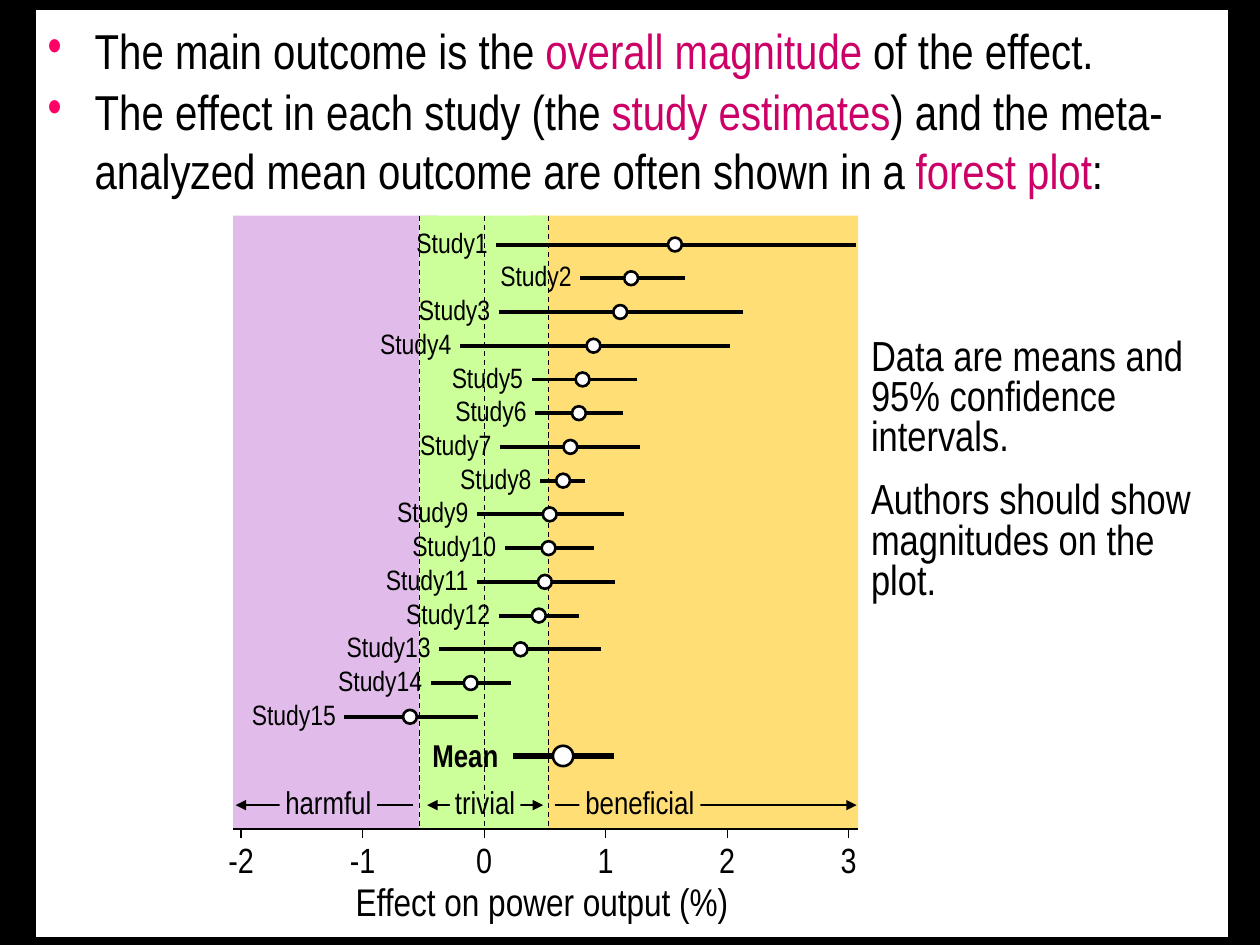
from dataclasses import dataclass

from lxml import etree
from pptx import Presentation
from pptx.dml.color import RGBColor
from pptx.enum.dml import MSO_LINE
from pptx.enum.shapes import MSO_CONNECTOR, MSO_SHAPE
from pptx.enum.text import MSO_ANCHOR, MSO_AUTO_SIZE, PP_ALIGN
from pptx.oxml.ns import qn
from pptx.util import Cm, Pt

RECTANGLE, OVAL = MSO_SHAPE.RECTANGLE, MSO_SHAPE.OVAL
STRAIGHT, DASH = MSO_CONNECTOR.STRAIGHT, MSO_LINE.DASH
LEFT, CENTER, RIGHT = PP_ALIGN.LEFT, PP_ALIGN.CENTER, PP_ALIGN.RIGHT
TOP, FIT_TEXT = MSO_ANCHOR.TOP, MSO_AUTO_SIZE.SHAPE_TO_FIT_TEXT


@dataclass(frozen=True)
class Theme:
    font: str = "Arial Narrow"
    black: str = "000000"
    white: str = "FFFFFF"
    accent: str = "CC0066"
    bullet: str = "FF0066"
    harmful: str = "E1BCEA"
    trivial: str = "CCFF99"
    beneficial: str = "FFDE75"
    body_size: int = 28
    note_size: int = 24
    title_size: int = 22
    tick_size: int = 20
    zone_size: int = 18
    study_size: int = 16


@dataclass(frozen=True)
class Estimate:
    """A mean effect and its confidence limits, in percent."""
    name: str
    low: float
    mean: float
    high: float


@dataclass(frozen=True)
class Zone:
    """A magnitude band; lengths in cm."""
    name: str
    color: str
    left: float
    width: float
    label_left: float
    label_width: float


THEME = Theme()

# Plot geometry in cm
PLOT_LEFT, PLOT_RIGHT, PLOT_TOP, AXIS_Y = 4.7, 17.3, 4.35, 16.71
ZERO_X, UNIT = 9.76, 2.45
FIRST_ROW, ROW_STEP, MEAN_ROW = 4.93, 0.68, 15.24
ZONE_ROW, THRESHOLD = 16.23, 0.53

BULLETS = [
    [("The main outcome is the ", False), ("overall magnitude", True), (" of the effect.", False)],
    [("The effect in each study (the ", False), ("study estimates", True),
     (") and the meta-analyzed mean outcome are often shown in a ", False),
     ("forest plot", True), (":", False)],
]
ZONES = [
    Zone("beneficial", THEME.beneficial, 10.69, 6.61, 11.68, 2.44),
    Zone("harmful", THEME.harmful, PLOT_LEFT, 4.14, 5.64, 1.96),
    Zone("trivial", THEME.trivial, 8.45, 2.6, 9.07, 1.42),
]
LIMITS = [
    (0.10, 1.57, 3.06), (0.79, 1.21, 1.65), (0.12, 1.12, 2.13), (-0.20, 0.90, 2.02),
    (0.39, 0.81, 1.26), (0.42, 0.78, 1.14), (0.13, 0.71, 1.28), (0.46, 0.65, 0.83),
    (-0.06, 0.54, 1.15), (0.17, 0.53, 0.90), (-0.06, 0.50, 1.08), (0.12, 0.45, 0.78),
    (-0.37, 0.30, 0.96), (-0.44, -0.11, 0.22), (-1.15, -0.61, -0.05),
]
STUDIES = [Estimate(f"Study{number}", *limits) for number, limits in enumerate(LIMITS, 1)]
OVERALL = Estimate("Mean", 0.24, 0.65, 1.07)
NOTES = [
    ("Data are means and 95% confidence intervals.", 6.83),
    ("Authors should show magnitudes on the plot.", 9.73),
]


def axis_x(effect: float) -> float:
    return ZERO_X + UNIT * effect


def add_box(shapes, kind, left: float, top: float, width: float, height: float,
            fill: str, line_width: float = 0):
    box = shapes.add_shape(kind, Cm(left), Cm(top), Cm(width), Cm(height))
    box.shadow.inherit = False
    box.fill.solid()
    box.fill.fore_color.rgb = RGBColor.from_string(fill)
    if line_width:
        box.line.color.rgb = RGBColor.from_string(THEME.black)
        box.line.width = Pt(line_width)
    else:
        box.line.fill.background()
    return box


def add_line(shapes, x1: float, y1: float, x2: float, y2: float, width: float = 0.75,
             dashed: bool = False, arrows: tuple[str, ...] = ()) -> None:
    line = shapes.add_connector(STRAIGHT, Cm(x1), Cm(y1), Cm(x2), Cm(y2))
    line.line.color.rgb = RGBColor.from_string(THEME.black)
    line.line.width = Pt(width)
    if dashed:
        line.line.dash_style = DASH
    for end in arrows:
        etree.SubElement(line.line._get_or_add_ln(), qn(f"a:{end}"), type="triangle")
    etree.SubElement(line._element.spPr, qn("a:effectLst"))


def style_run(run, size: int, color: str = THEME.black, bold: bool = False) -> None:
    run.font.name = THEME.font
    run.font.size = Pt(size)
    run.font.bold = bold
    run.font.color.rgb = RGBColor.from_string(color)


def add_text(shapes, text: str, left: float, top: float, width: float, height: float,
             size: int, align=CENTER, fill: str = "", bold: bool = False,
             wrap: bool = False, inset: tuple[float, float] = (0.1, 0)) -> None:
    if fill:
        box = add_box(shapes, RECTANGLE, left, top, width, height, fill)
    else:
        box = shapes.add_textbox(Cm(left), Cm(top), Cm(width), Cm(height))
    frame = box.text_frame
    frame.margin_left = frame.margin_right = Cm(inset[0])
    frame.margin_top = frame.margin_bottom = Cm(inset[1])
    frame.vertical_anchor = TOP
    frame.word_wrap = wrap
    frame.auto_size = FIT_TEXT
    frame.text = text
    para = frame.paragraphs[0]
    para.alignment = align
    para.line_spacing = 0.8
    style_run(para.runs[0], size, bold=bold)


def add_bullets(shapes) -> None:
    panel = add_box(shapes, RECTANGLE, 0.71, 0.18, 24.05, 18.72, THEME.white, 0.75)
    frame = panel.text_frame
    frame.word_wrap = True
    frame.vertical_anchor = TOP
    frame.margin_left = frame.margin_right = Cm(0.25)
    frame.margin_top, frame.margin_bottom = Cm(0.23), Cm(0.13)
    for index, spans in enumerate(BULLETS):
        para = frame.add_paragraph() if index else frame.paragraphs[0]
        para.alignment = LEFT
        para.space_before = Pt(1.4)
        properties = para._p.get_or_add_pPr()
        properties.set("marL", str(Cm(0.95)))
        properties.set("indent", str(-Cm(0.95)))
        color = etree.SubElement(properties, qn("a:buClr"))
        etree.SubElement(color, qn("a:srgbClr"), val=THEME.bullet)
        etree.SubElement(properties, qn("a:buFont"), typeface=THEME.font)
        etree.SubElement(properties, qn("a:buChar"), char="•")
        for text, highlighted in spans:
            span = para.add_run()
            span.text = text
            style_run(span, THEME.body_size, THEME.accent if highlighted else THEME.black)


def add_zones(shapes) -> None:
    for zone in ZONES:
        add_box(shapes, RECTANGLE, zone.left, PLOT_TOP, zone.width, AXIS_Y - PLOT_TOP, zone.color)
    for effect in (THRESHOLD, -THRESHOLD):
        add_line(shapes, axis_x(effect), PLOT_TOP, axis_x(effect), AXIS_Y, dashed=True)
    for start, end, arrows in ((11.18, 17.27, ("tailEnd",)), (8.33, 4.75, ("tailEnd",)),
                               (10.95, 8.61, ("headEnd", "tailEnd"))):
        add_line(shapes, start, ZONE_ROW, end, ZONE_ROW, arrows=arrows)
    for zone in ZONES:
        add_text(shapes, zone.name, zone.label_left, ZONE_ROW - 0.3, zone.label_width, 0.61,
                 THEME.zone_size, fill=zone.color)


def add_estimate(shapes, estimate: Estimate, y: float, overall: bool = False) -> None:
    low, mean, high = map(axis_x, (estimate.low, estimate.mean, estimate.high))
    marker = 0.41 if overall else 0.28
    label_width = 1.85 if overall else 1.96 if len(estimate.name) < 7 else 2.23
    label_right = low - 0.05 if overall else low + 0.08
    add_text(shapes, estimate.name, label_right - label_width, y - 0.39, label_width, 0.82,
             THEME.zone_size if overall else THEME.study_size, RIGHT,
             bold=overall, inset=(0.25, 0.13))
    add_line(shapes, high, y, low, y, 3.75 if overall else 2.25)
    add_box(shapes, OVAL, mean - marker / 2, y - marker / 2, marker, marker, THEME.white, 1.5)


def add_axis(shapes) -> None:
    add_line(shapes, PLOT_LEFT, AXIS_Y, PLOT_RIGHT, AXIS_Y)
    for effect in range(-2, 4):
        x, label = axis_x(effect), str(effect)
        width = 0.3 + 0.3 * len(label)
        add_line(shapes, x, AXIS_Y + 0.18, x, AXIS_Y)
        add_text(shapes, label, x - width / 2, 17.07, width, 0.69, THEME.tick_size)
    add_text(shapes, "Effect on power output (%)", 7.04, 17.88, 7.77, 0.76,
             THEME.title_size, fill=THEME.white)


def main() -> None:
    deck = Presentation()
    deck.slide_width, deck.slide_height = Cm(25.4), Cm(19.05)
    page = deck.slides.add_slide(deck.slide_layouts[6])
    page.background.fill.solid()
    page.background.fill.fore_color.rgb = RGBColor.from_string(THEME.black)

    # Text panel and magnitude bands
    add_bullets(page.shapes)
    add_zones(page.shapes.add_group_shape().shapes)

    # Forest plot
    plot = page.shapes.add_group_shape().shapes
    add_line(plot, ZERO_X, PLOT_TOP, ZERO_X, AXIS_Y, dashed=True)
    for row, study in enumerate(STUDIES):
        add_estimate(plot, study, FIRST_ROW + row * ROW_STEP)
    add_estimate(plot, OVERALL, MEAN_ROW, overall=True)
    add_axis(plot)

    # Side notes
    for text, top in NOTES:
        add_text(page.shapes, text, 17.46, top, 6.71, 2.46, THEME.note_size, LEFT,
                 fill=THEME.white, wrap=True)
    deck.save("out.pptx")


if __name__ == "__main__":
    main()
